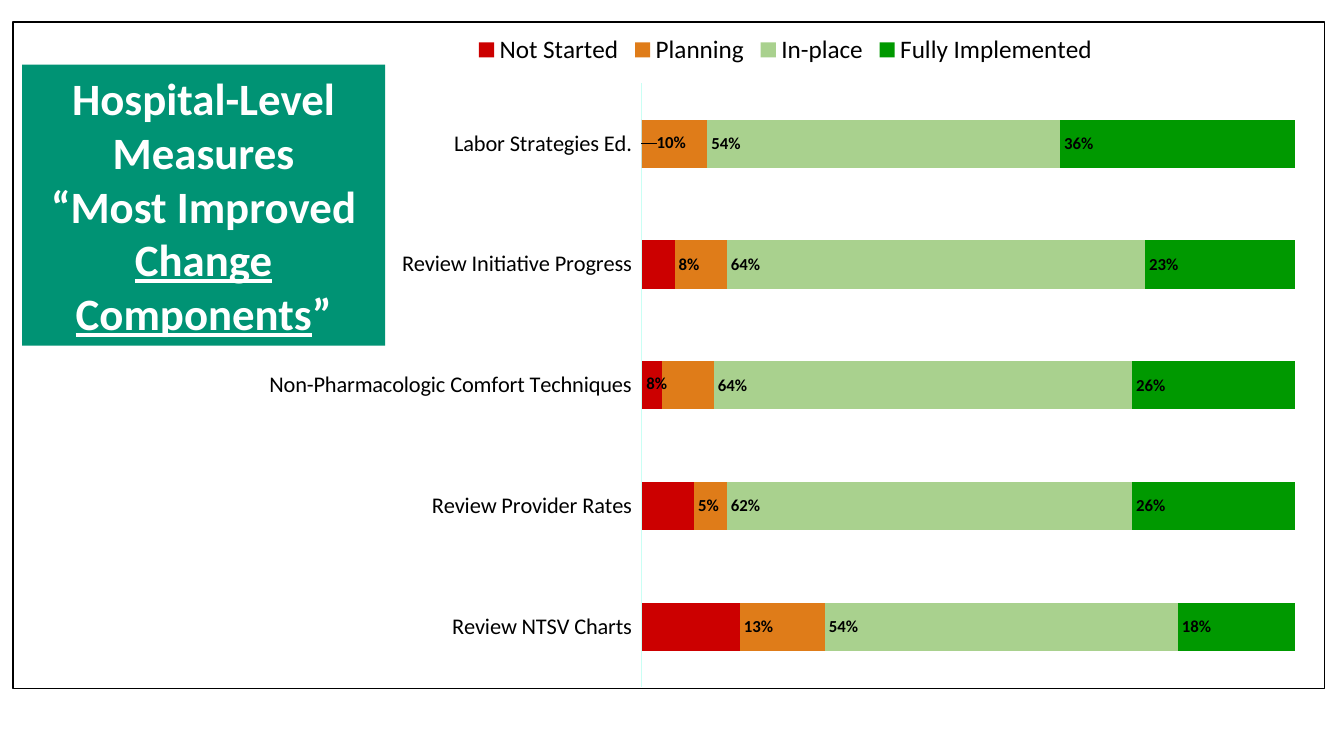
from lxml.etree import SubElement
from pptx import Presentation
from pptx.chart.data import CategoryChartData
from pptx.dml.color import RGBColor
from pptx.enum.chart import XL_CHART_TYPE as ChartType
from pptx.enum.chart import XL_LABEL_POSITION as LabelPosition
from pptx.enum.chart import XL_LEGEND_POSITION as LegendPosition
from pptx.enum.chart import XL_TICK_LABEL_POSITION as TickLabels
from pptx.enum.chart import XL_TICK_MARK as TickMark
from pptx.enum.shapes import MSO_SHAPE as Shape
from pptx.enum.text import MSO_ANCHOR as Anchor
from pptx.enum.text import MSO_AUTO_SIZE as AutoSize
from pptx.enum.text import PP_ALIGN as Align
from pptx.oxml.ns import qn
from pptx.util import Inches, Pt

FONT = "Calibri"
BLACK = RGBColor(0x00, 0x00, 0x00)
WHITE = RGBColor(0xFF, 0xFF, 0xFF)
TEAL = RGBColor(0x00, 0x93, 0x74)
PALE_AQUA = RGBColor(0xC9, 0xFF, 0xF4)
RED = RGBColor(0xCC, 0x00, 0x00)
ORANGE = RGBColor(0xDF, 0x7C, 0x19)
LIGHT_GREEN = RGBColor(0xA9, 0xD1, 0x8E)
GREEN = RGBColor(0x00, 0x99, 0x00)

TITLE_BOX = (0.22, 0.64, 3.6, 2.79)
CHART_BOX = (2.52, 0.22, 10.54, 6.76)
FRAME_BOX = (0.13, 0.22, 13.01, 6.61)
PLOT_SHARE = {"x": 0.365, "y": 0.09, "w": 0.615, "h": 0.886}

TITLE_LINES = [
    [("Hospital-Level Measures", False)],
    [("“Most Improved ", False), ("Change Components", True), ("”", False)],
]
MEASURES = [
    "Review NTSV Charts",
    "Review Provider Rates",
    "Non-Pharmacologic Comfort Techniques",
    "Review Initiative Progress",
    "Labor Strategies Ed.",
]
STAGES = [
    ("Not Started", RED, (0.15, 0.08, 0.03, 0.05, 0)),
    ("Planning", ORANGE, (0.13, 0.05, 0.08, 0.08, 0.1)),
    ("In-place", LIGHT_GREEN, (0.54, 0.62, 0.64, 0.64, 0.54)),
    ("Fully Implemented", GREEN, (0.18, 0.26, 0.26, 0.23, 0.36)),
]
PLANNING_SHIFTS = {2: {"x": -0.018, "y": -0.002}, 4: {"x": 0.01, "y": -0.002}}


def style_font(font, size, color=BLACK, bold=False):
    font.name = FONT
    font.size = Pt(size)
    font.bold = bold
    font.color.rgb = color


def add_layout(parent, index, shares, inner=False):
    layout = parent.makeelement(qn("c:layout"))
    manual = SubElement(layout, qn("c:manualLayout"))
    if inner:
        SubElement(manual, qn("c:layoutTarget")).set("val", "inner")
        for axis in "xy":
            SubElement(manual, qn(f"c:{axis}Mode")).set("val", "edge")
    for name, share in shares.items():
        SubElement(manual, qn(f"c:{name}")).set("val", str(share))
    parent.insert(index, layout)


def place_title(page, box):
    title = page.shapes.title
    title.left, title.top, title.width, title.height = map(Inches, box)
    title.fill.solid()
    title.fill.fore_color.rgb = TEAL
    frame = title.text_frame
    frame.word_wrap = True
    frame.auto_size = AutoSize.NONE
    frame.vertical_anchor = Anchor.MIDDLE
    for number, line in enumerate(TITLE_LINES):
        para = frame.add_paragraph() if number else frame.paragraphs[0]
        para.alignment = Align.CENTER
        for text, underlined in line:
            span = para.add_run()
            span.text = text
            style_font(span.font, 32, WHITE, bold=True)
            span.font.underline = underlined


def label_series(series):
    labels = series.data_labels
    labels.show_value = True
    labels.number_format = "0%"
    labels.number_format_is_linked = False
    labels.position = LabelPosition.INSIDE_BASE
    style_font(labels.font, 12, bold=True)


def shift_labels(series, shifts):
    for index in shifts:
        label = series.points[index].data_label
        label.position = LabelPosition.INSIDE_BASE
        style_font(label.font, 12, bold=True)
    for element, shift in zip(series.data_labels._element.findall(qn("c:dLbl")), shifts.values()):
        add_layout(element, 1, shift)


def place_chart(page, box):
    data = CategoryChartData(number_format="0%")
    data.categories = MEASURES
    for name, _, values in STAGES:
        data.add_series(name, values)
    chart = page.shapes.add_chart(ChartType.BAR_STACKED, *map(Inches, box), data).chart
    style_font(chart.font, 10, TEAL)
    chart.has_title = False
    chart.has_legend = True
    chart.legend.position = LegendPosition.TOP
    chart.legend.include_in_layout = False
    style_font(chart.legend.font, 18)

    measures = chart.category_axis
    measures.major_tick_mark = TickMark.NONE
    measures.tick_label_position = TickLabels.LOW
    measures.format.line.color.rgb = PALE_AQUA
    measures.format.line.width = Pt(0.75)
    style_font(measures.tick_labels.font, 16)
    shares = chart.value_axis
    shares.minimum_scale = 0
    shares.maximum_scale = 1
    shares.has_major_gridlines = False
    shares.visible = False

    plot = chart.plots[0]
    plot.gap_width = 150
    plot.overlap = 100
    plot.vary_by_categories = False
    for series, (name, color, _) in zip(plot.series, STAGES):
        series.format.fill.solid()
        series.format.fill.fore_color.rgb = color
        if name != "Not Started":
            label_series(series)
    shift_labels(plot.series[1], PLANNING_SHIFTS)

    area = chart._chartSpace.chart.plotArea
    for layout in area.findall(qn("c:layout")):
        area.remove(layout)
    add_layout(area, 0, PLOT_SHARE, inner=True)


def place_frame(page, box):
    frame = page.shapes.add_shape(Shape.RECTANGLE, *map(Inches, box))
    frame.shadow.inherit = False
    frame.fill.background()
    frame.line.color.rgb = BLACK
    frame.line.width = Pt(1)


def main():
    deck = Presentation()
    deck.slide_width, deck.slide_height = Inches(13.33), Inches(7.5)
    page = deck.slides.add_slide(deck.slide_layouts[5])
    place_title(page, TITLE_BOX)
    place_chart(page, CHART_BOX)
    place_frame(page, FRAME_BOX)
    deck.save("out.pptx")


if __name__ == "__main__":
    main()
